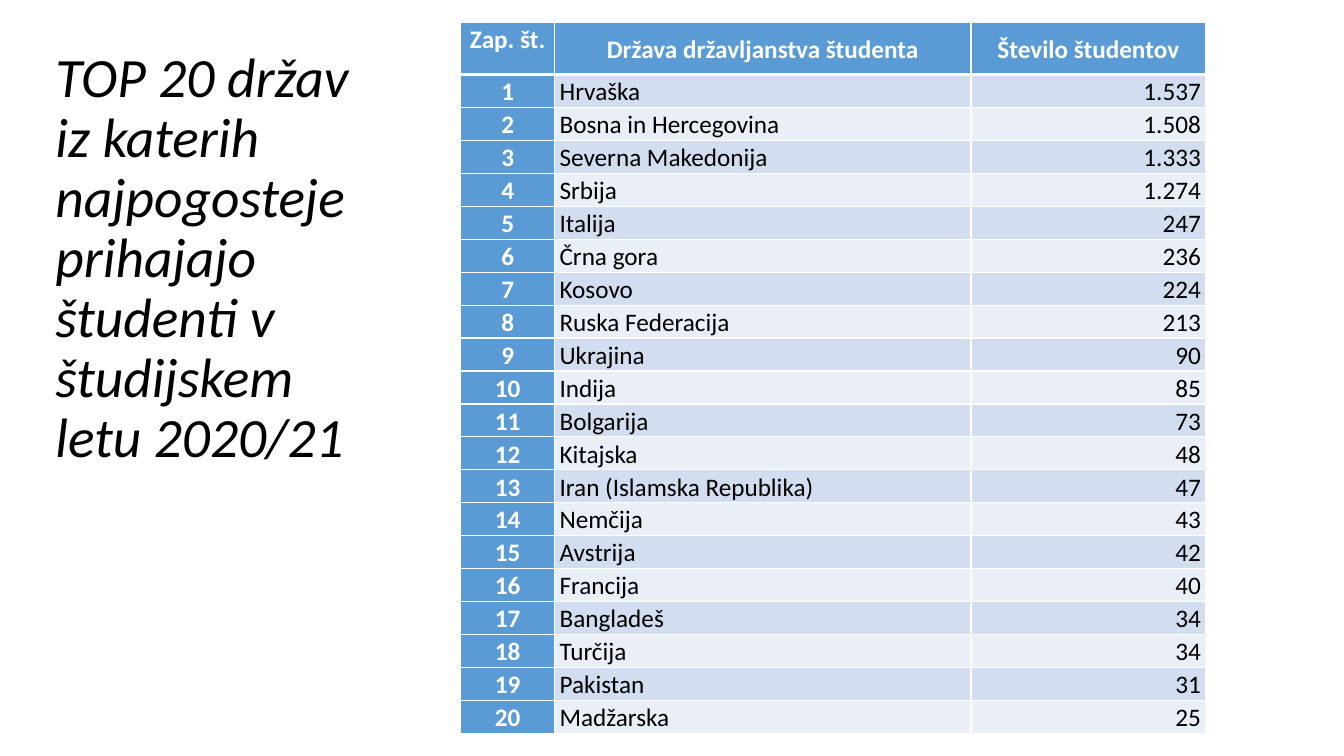
from dataclasses import dataclass

from lxml.etree import SubElement
from pptx import Presentation
from pptx.dml.color import RGBColor
from pptx.enum.text import MSO_ANCHOR, MSO_AUTO_SIZE, PP_ALIGN
from pptx.oxml.ns import qn
from pptx.util import Inches, Pt


@dataclass(frozen=True)
class Theme:
    font: str = "Calibri"
    black: str = "000000"
    white: str = "FFFFFF"
    blue: str = "5B9BD5"
    odd_band: str = "D2DEEF"
    even_band: str = "EAEFF7"
    title_size: float = 39.6
    table_size: float = 18
    grid_line: float = 1
    header_line: float = 3


THEME = Theme()

TITLE = "TOP 20 držav iz katerih najpogosteje prihajajo študenti v študijskem letu 2020/21"
HEADERS = ("Zap. št.", "Država državljanstva študenta", "Število študentov")
COUNTRIES = (
    ("Hrvaška", "1.537"),
    ("Bosna in Hercegovina", "1.508"),
    ("Severna Makedonija", "1.333"),
    ("Srbija", "1.274"),
    ("Italija", "247"),
    ("Črna gora", "236"),
    ("Kosovo", "224"),
    ("Ruska Federacija", "213"),
    ("Ukrajina", "90"),
    ("Indija", "85"),
    ("Bolgarija", "73"),
    ("Kitajska", "48"),
    ("Iran (Islamska Republika)", "47"),
    ("Nemčija", "43"),
    ("Avstrija", "42"),
    ("Francija", "40"),
    ("Bangladeš", "34"),
    ("Turčija", "34"),
    ("Pakistan", "31"),
    ("Madžarska", "25"),
)
COLUMN_WIDTHS = (0.93, 4.13, 2.33)
COLUMN_ALIGNMENTS = (PP_ALIGN.CENTER, PP_ALIGN.LEFT, PP_ALIGN.RIGHT)
HEADER_HEIGHT = 0.52
ROW_HEIGHT = 0.31


def style_text(text_frame, size, color, alignment, spacing, bold=False, italic=False):
    for paragraph in text_frame.paragraphs:
        paragraph.alignment = alignment
        paragraph.line_spacing = spacing
        for run in paragraph.runs:
            run.font.name = THEME.font
            run.font.size = Pt(size)
            run.font.bold = bold
            run.font.italic = italic
            run.font.color.rgb = RGBColor.from_string(color)


def place_title(slide):
    title = slide.shapes.title
    title.left, title.top = Inches(0.45), Inches(1.85)
    title.width, title.height = Inches(3.49), Inches(1.45)
    frame = title.text_frame
    frame.text = TITLE
    frame.word_wrap = True
    frame.auto_size = MSO_AUTO_SIZE.NONE
    frame.vertical_anchor = MSO_ANCHOR.MIDDLE
    style_text(frame, THEME.title_size, THEME.black, PP_ALIGN.LEFT, 0.9, italic=True)


def set_borders(cell, top, bottom):
    properties = cell._tc.get_or_add_tcPr()
    widths = {"L": THEME.grid_line, "R": THEME.grid_line, "T": top, "B": bottom}
    for side, width in widths.items():
        line = SubElement(properties, qn(f"a:ln{side}"), w=str(Pt(width)))
        fill = SubElement(line, qn("a:solidFill"))
        SubElement(fill, qn("a:srgbClr"), val=THEME.white)


def fill_cell(cell, text, background, color, alignment, bold, top, bottom):
    cell.text_frame.text = text
    cell.vertical_anchor = MSO_ANCHOR.MIDDLE
    cell.margin_left = cell.margin_right = Inches(0.05)
    cell.margin_top = cell.margin_bottom = 0
    set_borders(cell, top, bottom)
    cell.fill.solid()
    cell.fill.fore_color.rgb = RGBColor.from_string(background)
    style_text(cell.text_frame, THEME.table_size, color, alignment, 1.07, bold)


def add_country_table(slide):
    rows = [HEADERS] + [
        (str(rank), country, students)
        for rank, (country, students) in enumerate(COUNTRIES, 1)
    ]
    height = HEADER_HEIGHT + ROW_HEIGHT * len(COUNTRIES)
    table = slide.shapes.add_table(
        len(rows), len(HEADERS), Inches(4.57), Inches(0.22),
        Inches(sum(COLUMN_WIDTHS)), Inches(height),
    ).table
    table.first_col = True
    for column, width in zip(table.columns, COLUMN_WIDTHS):
        column.width = Inches(width)

    for rank, values in enumerate(rows):
        is_header = rank == 0
        table.rows[rank].height = Inches(HEADER_HEIGHT if is_header else ROW_HEIGHT)
        band = THEME.odd_band if rank % 2 else THEME.even_band
        top = THEME.header_line if rank == 1 else THEME.grid_line
        bottom = THEME.header_line if is_header else THEME.grid_line
        for position, text in enumerate(values):
            is_label = is_header or position == 0
            fill_cell(
                table.cell(rank, position),
                text,
                THEME.blue if is_label else band,
                THEME.white if is_label else THEME.black,
                PP_ALIGN.CENTER if is_header else COLUMN_ALIGNMENTS[position],
                is_label,
                top,
                bottom,
            )
    table.cell(0, 0).vertical_anchor = MSO_ANCHOR.TOP


def main():
    presentation = Presentation()
    presentation.slide_width = Inches(13.33)
    presentation.slide_height = Inches(7.5)
    slide = presentation.slides.add_slide(presentation.slide_layouts.get_by_name("Title Only"))
    place_title(slide)
    add_country_table(slide)
    presentation.save("out.pptx")


if __name__ == "__main__":
    main()
